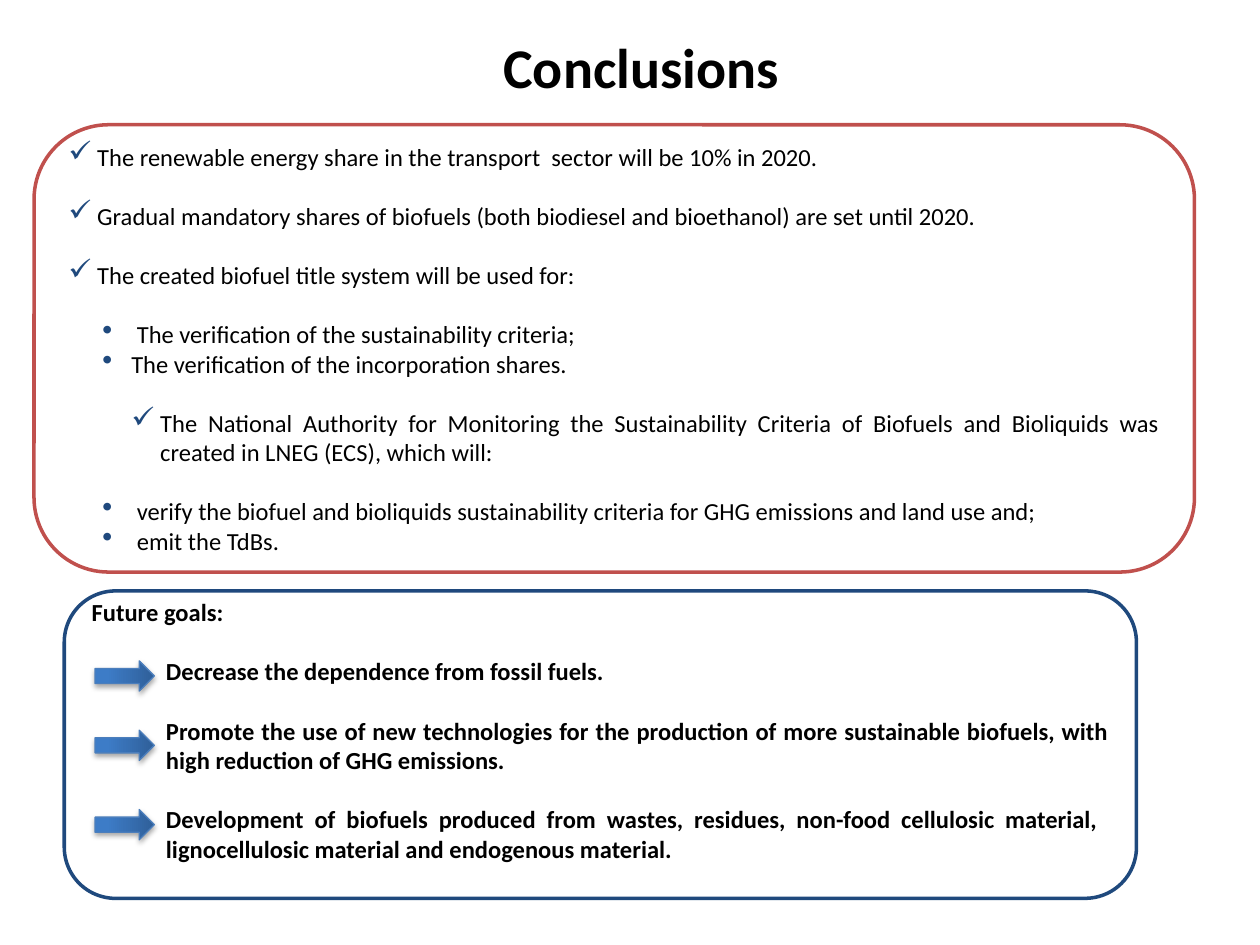
from lxml import etree
from pptx import Presentation
from pptx.dml.color import RGBColor
from pptx.enum.shapes import MSO_SHAPE as Shape
from pptx.enum.text import MSO_ANCHOR as Anchor, PP_ALIGN as Align
from pptx.oxml import parse_xml
from pptx.oxml.ns import nsdecls, qn
from pptx.util import Inches, Pt

BLACK = RGBColor(0x00, 0x00, 0x00)
WHITE = RGBColor(0xFF, 0xFF, 0xFF)
RED = RGBColor(0xC0, 0x50, 0x4D)
NAVY = RGBColor(0x1F, 0x49, 0x7D)
ARROW_DARK = RGBColor(0x2F, 0x5F, 0x99)
ARROW_LIGHT = RGBColor(0x3D, 0x7C, 0xC7)
ARROW_LINE = RGBColor(0x4B, 0x7E, 0xBC)
BLANK_LINE = Pt(17)
HANGING = 0.23

presentation = Presentation()
presentation.slide_width = Inches(10)
presentation.slide_height = Inches(7.5)
slide = presentation.slides.add_slide(presentation.slide_layouts[5])


def add_panel(left, top, width, height, line_color):
    panel = slide.shapes.add_shape(
        Shape.ROUNDED_RECTANGLE, Inches(left), Inches(top), Inches(width), Inches(height))
    panel.shadow.inherit = False
    panel.fill.solid()
    panel.fill.fore_color.rgb = WHITE
    panel.line.color.rgb = line_color
    panel.line.width = Pt(2)
    panel.text_frame.word_wrap = True
    panel.text_frame.vertical_anchor = Anchor.MIDDLE
    return panel


def write_paragraph(text_frame, index, text, margin, hanging, gap, bullet="", bold=False):
    paragraph = text_frame.paragraphs[0] if index == 0 else text_frame.add_paragraph()
    paragraph.text = text
    paragraph.alignment = Align.JUSTIFY
    if gap:
        paragraph.space_before = BLANK_LINE
    properties = paragraph._p.get_or_add_pPr()
    properties.set("marL", str(Inches(margin)))
    properties.set("indent", str(-Inches(hanging)))
    if bullet:
        color = etree.SubElement(properties, qn("a:buClr"))
        etree.SubElement(color, qn("a:srgbClr"), val=str(NAVY))
        etree.SubElement(properties, qn("a:buSzPct"), val="120000")
        etree.SubElement(properties, qn("a:buChar"), char=bullet)
    font = paragraph.runs[0].font
    font.name = "Calibri"
    font.size = Pt(14)
    font.bold = bold
    font.color.rgb = BLACK


title = slide.shapes.title
title.left, title.top = Inches(0.5), Inches(0.05)
title.width, title.height = Inches(9.18), Inches(0.79)
title.text_frame.text = "Conclusions"
title.text_frame.vertical_anchor = Anchor.BOTTOM
title.text_frame.paragraphs[0].alignment = Align.CENTER
title_font = title.text_frame.paragraphs[0].runs[0].font
title_font.name = "Calibri"
title_font.size = Pt(32)
title_font.bold = True
title_font.color.rgb = BLACK

conclusions = [
    ("✓", HANGING, False, "The renewable energy share in the transport  sector will be 10% in 2020."),
    ("✓", HANGING, True, "Gradual mandatory shares of biofuels (both biodiesel and bioethanol) are set until 2020."),
    ("✓", HANGING, True, "The created biofuel title system will be used for:"),
    ("•", 0.5, True, " The verification of the sustainability criteria;"),
    ("•", 0.5, False, "The verification of the incorporation shares."),
    ("✓", 0.73, True, "The National Authority for Monitoring the Sustainability Criteria of Biofuels "
     "and Bioliquids was created in LNEG (ECS), which will:"),
    ("•", 0.5, True, " verify the biofuel and bioliquids sustainability criteria for GHG emissions and land use and;"),
    ("•", 0.5, False, " emit the TdBs."),
]
conclusions_panel = add_panel(0.27, 0.99, 9.21, 3.55, RED)
for index, (bullet, margin, gap, text) in enumerate(conclusions):
    write_paragraph(conclusions_panel.text_frame, index, text, margin, HANGING, gap, bullet)

goals = [
    "Future goals:",
    "Decrease the dependence from fossil fuels.",
    "Promote the use of new technologies for the production of more sustainable biofuels, "
    "with high reduction of GHG emissions.",
    "Development of biofuels produced from wastes, residues, non-food cellulosic material,  "
    "lignocellulosic material and endogenous material.",
]
goals_panel = add_panel(0.51, 4.69, 8.51, 2.44, NAVY)
goals_panel.text_frame.margin_bottom = Inches(0.28)
for index, text in enumerate(goals):
    margin = 0.59 if index else 0
    write_paragraph(goals_panel.text_frame, index, text, margin, 0, index > 0, bold=True)

for top in (5.13, 5.68, 6.31):
    arrow = slide.shapes.add_shape(
        Shape.DOWN_ARROW, Inches(0.87), Inches(top), Inches(0.24), Inches(0.47))
    arrow.rotation = 270
    arrow.fill.gradient()
    arrow.fill.gradient_angle = 90
    for stop, color, position in zip(
            arrow.fill.gradient_stops, (ARROW_DARK, ARROW_LIGHT), (0, 0.8)):
        stop.color.rgb = color
        stop.position = position
    arrow.line.color.rgb = ARROW_LINE
    arrow.line.width = Pt(0.75)
    arrow.shadow.inherit = False
    effects = arrow._element.spPr.find(qn("a:effectLst"))
    effects.append(parse_xml(
        f'<a:outerShdw {nsdecls("a")} blurRad="{Pt(3.1)}" dist="{Pt(1.8)}" dir="5400000" '
        'rotWithShape="0"><a:srgbClr val="000000"><a:alpha val="35000"/></a:srgbClr></a:outerShdw>'))

presentation.save("out.pptx")
